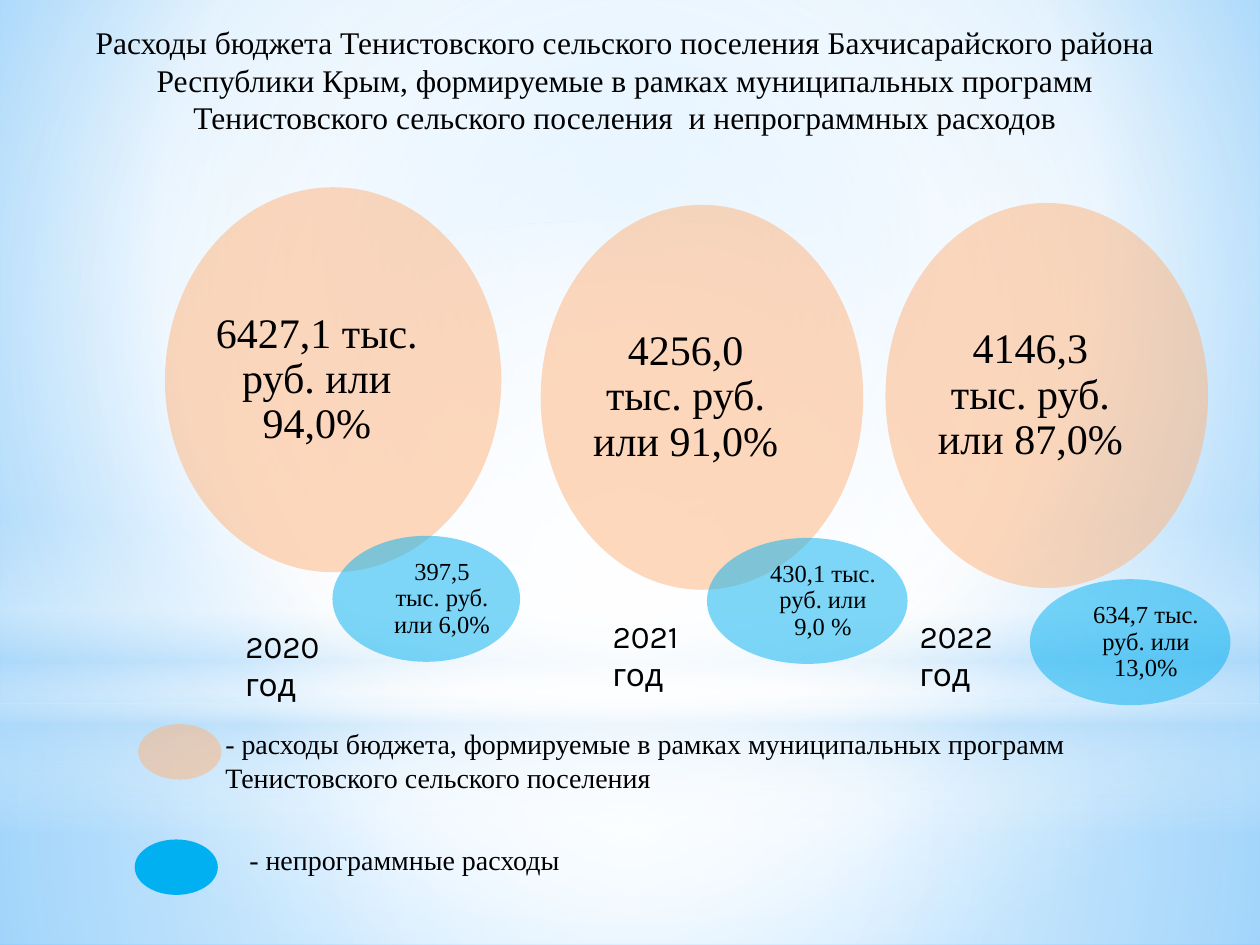
from lxml.etree import SubElement
from pptx import Presentation
from pptx.dml.color import RGBColor
from pptx.enum.shapes import MSO_SHAPE as Shape
from pptx.enum.text import MSO_ANCHOR as Anchor, MSO_AUTO_SIZE as AutoSize, PP_ALIGN as Align
from pptx.oxml.ns import qn
from pptx.util import Pt

BLACK = RGBColor(0x00, 0x00, 0x00)
WHITE = RGBColor(0xFF, 0xFF, 0xFF)
PEACH = RGBColor(0xFF, 0xB3, 0x7A)
BLUE = RGBColor(0x00, 0xB0, 0xF0)
MIST = RGBColor(0xB4, 0xDC, 0xFA)
SKY = RGBColor(0x9E, 0xD5, 0xFF)
DEEP_SKY = RGBColor(0x5B, 0xB9, 0xFF)

SERIF = "Times New Roman"
SANS = "Karla"
CENTER = (50, 50, 50, 50)

BACKDROPS = [
    (Shape.RECTANGLE, (0, 401.8, 720, 138.2),
     [(0, WHITE, 91), (37, WHITE, 76), (100, MIST, 79)], CENTER),
    (Shape.RECTANGLE, (0, 0, 720, 401.8),
     [(0, WHITE, 89), (48, WHITE, 62), (100, MIST, 79)], CENTER),
    (Shape.RECTANGLE, (0, 296.6, 720, 180),
     [(0, WHITE, 0), (29, WHITE, 30), (45, MIST, 40),
      (55, WHITE, 26), (65, MIST, 60), (100, WHITE, 0)], None),
    (Shape.OVAL, (0, 126, 720, 401.8), [(0, WHITE, 100), (56, WHITE, 0)], CENTER),
]

PROGRAM_SPENDING = [
    ("6427,1 тыс. руб. или 94,0%", (94.3, 107, 192.2, 220)),
    ("4256,0 тыс. руб. или 91,0%", (309, 117, 184.3, 220)),
    ("4146,3 тыс. руб. или 87,0%", (506, 116, 184.3, 220)),
]
OTHER_SPENDING = [
    ("397,5 тыс. руб. или 6,0%", (190, 306.2, 107.2, 72)),
    ("430,1 тыс. руб. или 9,0 %", (404, 307.4, 114.6, 72)),
    ("634,7 тыс. руб. или 13,0%", (588.5, 331, 114.6, 72)),
]
YEARS = [
    ("2020 год", (133.2, 355, 79.2, 51)),
    ("2021 год", (343, 349.2, 58.3, 51)),
    ("2022 год", (518.4, 349.2, 79.2, 51)),
]
LEGEND = [
    ("- расходы бюджета, формируемые в рамках муниципальных программ "
     "Тенистовского сельского поселения",
     (121.7, 411.8, 556, 46), (79, 413.8, 47.5, 31.7), PEACH, 50),
    ("- непрограммные расходы",
     (135.4, 478, 487.4, 26.6), (77, 479.7, 47.5, 31.7), BLUE, 100),
]
TITLE = ("Расходы бюджета Тенистовского сельского поселения Бахчисарайского района "
         "Республики Крым, формируемые в рамках муниципальных программ "
         "Тенистовского сельского поселения  и непрограммных расходов")


def set_alpha(color_element, opacity):
    SubElement(color_element, qn("a:alpha")).set("val", str(opacity * 1000))


def fill_gradient(fill, owner, stops, center):
    fill.gradient()
    gradient = owner.find(".//" + qn("a:gradFill"))
    gradient.clear()
    stop_list = SubElement(gradient, qn("a:gsLst"))
    for position, color, opacity in stops:
        stop = SubElement(stop_list, qn("a:gs"), pos=str(position * 1000))
        set_alpha(SubElement(stop, qn("a:srgbClr"), val=str(color)), opacity)
    if center:
        path = SubElement(gradient, qn("a:path"), path="circle")
        edges = {side: str(value * 1000) for side, value in zip("ltrb", center)}
        SubElement(path, qn("a:fillToRect"), **edges)
    else:
        SubElement(gradient, qn("a:lin"), ang="5400000", scaled="0")


def write_text(frame, text, size=18, font=SERIF, align=Align.LEFT,
               anchor=Anchor.TOP, auto_size=AutoSize.SHAPE_TO_FIT_TEXT,
               margins=(7.2, 3.6, 7.2, 3.6), line_spacing=1.0):
    frame.word_wrap = True
    frame.auto_size = auto_size
    frame.vertical_anchor = anchor
    (frame.margin_left, frame.margin_top,
     frame.margin_right, frame.margin_bottom) = map(Pt, margins)
    paragraph = frame.paragraphs[0]
    paragraph.alignment = align
    paragraph.line_spacing = line_spacing
    run = paragraph.add_run()
    run.text = text
    run.font.size = Pt(size)
    run.font.name = font
    run.font.color.rgb = BLACK


def add_plain_shape(slide, kind, box):
    shape = slide.shapes.add_shape(kind, *map(Pt, box))
    shape.shadow.inherit = False
    shape.line.fill.background()
    return shape


def add_backdrop(slide, kind, box, stops, center):
    shape = add_plain_shape(slide, kind, box)
    fill_gradient(shape.fill, shape.element, stops, center)


def add_ellipse(slide, box, color, opacity=50):
    shape = add_plain_shape(slide, Shape.OVAL, box)
    shape.fill.solid()
    shape.fill.fore_color.rgb = color
    if opacity < 100:
        set_alpha(shape.element.spPr.find(".//" + qn("a:srgbClr")), opacity)
    return shape


def add_bubbles(slide, bubbles, color, size, margins):
    for text, box in bubbles:
        shape = add_ellipse(slide, box, color)
        write_text(shape.text_frame, text, size=size, align=Align.CENTER,
                   anchor=Anchor.MIDDLE, auto_size=AutoSize.NONE,
                   margins=margins, line_spacing=0.9)


def add_label(slide, text, box, **text_format):
    label = slide.shapes.add_textbox(*map(Pt, box))
    write_text(label.text_frame, text, **text_format)


def place_title(slide):
    title = slide.shapes.title
    title.left, title.top, title.width, title.height = map(Pt, (31, 9.4, 652.3, 72.7))
    write_text(title.text_frame, TITLE, align=Align.CENTER)
    slide.shapes.element.append(title.element)


def main():
    presentation = Presentation()
    presentation.slide_width, presentation.slide_height = Pt(720), Pt(540)
    slide = presentation.slides.add_slide(presentation.slide_layouts[5])

    fill_gradient(slide.background.fill, slide.element,
                  [(0, SKY, 100), (60, WHITE, 100), (100, DEEP_SKY, 100)],
                  (20, 10, 20, 60))
    for backdrop in BACKDROPS:
        add_backdrop(slide, *backdrop)
    place_title(slide)

    for text, text_box, key_box, color, opacity in LEGEND:
        add_ellipse(slide, key_box, color, opacity)
        add_label(slide, text, text_box, size=16)
    add_bubbles(slide, PROGRAM_SPENDING, PEACH, 24, (0, 0, 18.7, 0))
    add_bubbles(slide, OTHER_SPENDING, BLUE, 14, (18.7, 2, 0.7, 2))
    for text, box in YEARS:
        add_label(slide, text, box, font=SANS)

    presentation.save("out.pptx")


if __name__ == "__main__":
    main()
